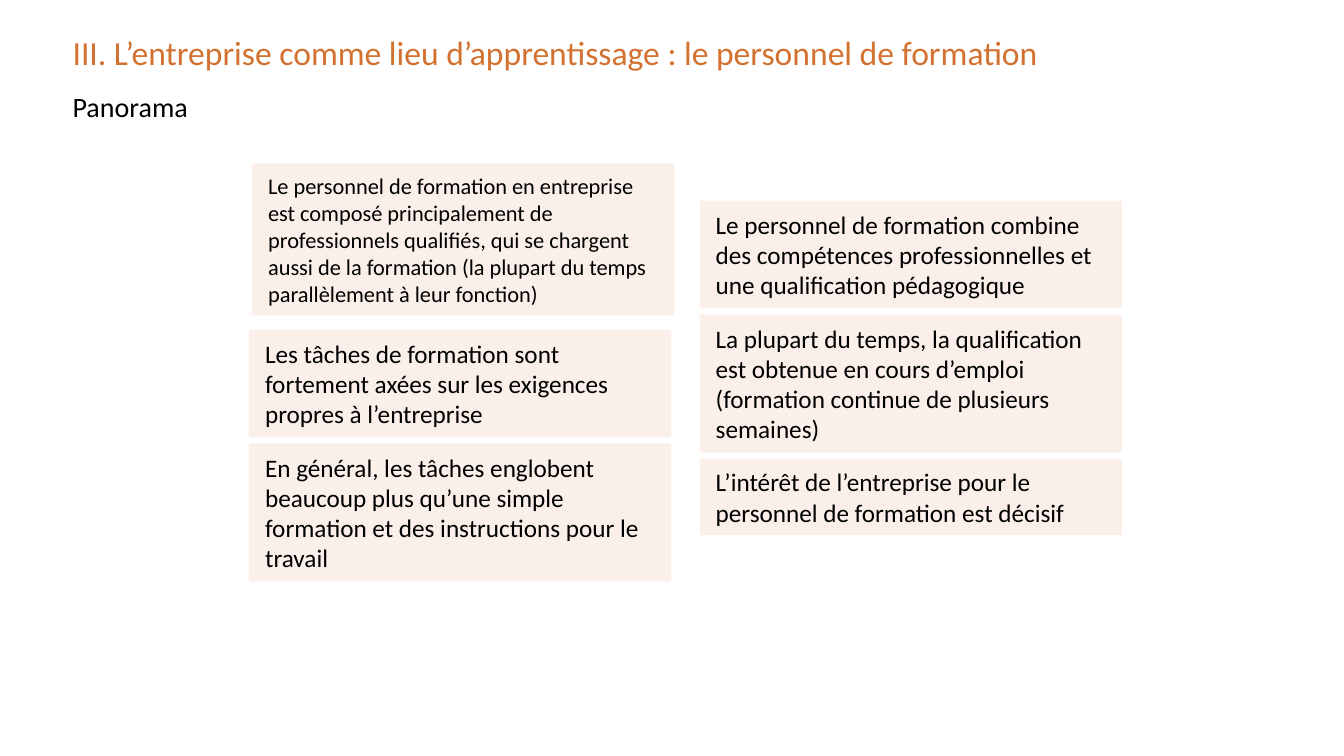
from lxml.etree import SubElement
from pptx import Presentation
from pptx.dml.color import RGBColor
from pptx.enum.shapes import MSO_SHAPE
from pptx.enum.text import MSO_ANCHOR, MSO_AUTO_SIZE, PP_ALIGN
from pptx.oxml.ns import qn
from pptx.util import Pt


def color(hex_string):
    return RGBColor.from_string(hex_string)


class SlideBuilder:
    font_name = "Calibri"
    accent = "D37230"
    black = "000000"
    tint_percent = 10

    def __init__(self, slide):
        self.slide = slide

    def set_text(self, shape, text, size, text_color, anchor, margins=(0, 0)):
        frame = shape.text_frame
        frame.word_wrap = True
        frame.vertical_anchor = anchor
        frame.margin_left = frame.margin_right = Pt(margins[0])
        frame.margin_top = frame.margin_bottom = Pt(margins[1])
        frame.text = text
        paragraph = frame.paragraphs[0]
        paragraph.alignment = PP_ALIGN.LEFT
        paragraph.space_before = Pt(0)
        font = paragraph.runs[0].font
        font.name = self.font_name
        font.size = Pt(size)
        font.color.rgb = color(text_color)
        return paragraph

    def heading(self, placeholder, text, box, size, text_color):
        placeholder.left, placeholder.top, placeholder.width, placeholder.height = map(Pt, box)
        paragraph = self.set_text(placeholder, text, size, text_color, MSO_ANCHOR.TOP)
        placeholder.text_frame.auto_size = MSO_AUTO_SIZE.NONE
        return paragraph

    def title(self, text, box):
        self.heading(self.slide.shapes.title, text, box, 24, self.accent)

    def subtitle(self, text, box):
        paragraph = self.heading(self.slide.placeholders[1], text, box, 20, self.black)
        # Plain line: no bullet, no hanging indent
        properties = paragraph._p.get_or_add_pPr()
        properties.set("marL", "0")
        properties.set("indent", "0")
        SubElement(properties, qn("a:buNone"))

    def card(self, text, left, top, width, height, size=18):
        shape = self.slide.shapes.add_shape(
            MSO_SHAPE.RECTANGLE, Pt(left), Pt(top), Pt(width), Pt(height))
        shape.shadow.inherit = False
        shape.line.fill.background()
        shape.fill.solid()
        shape.fill.fore_color.rgb = color(self.accent)
        fill_color = shape._element.spPr.find(qn("a:solidFill"))[0]
        SubElement(fill_color, qn("a:alpha"), val=str(self.tint_percent * 1000))
        self.set_text(shape, text, size, self.black, MSO_ANCHOR.MIDDLE, (11.52, 5.76))
        shape.text_frame.auto_size = MSO_AUTO_SIZE.SHAPE_TO_FIT_TEXT

    def card_stack(self, left, top, width, cards, gap=4.32):
        for text, height in cards:
            self.card(text, left, top, width, height)
            top += height + gap


def main():
    presentation = Presentation()
    presentation.slide_width = Pt(960)
    presentation.slide_height = Pt(540)
    builder = SlideBuilder(presentation.slides.add_slide(presentation.slide_layouts[1]))

    # Headings
    builder.title("III. L’entreprise comme lieu d’apprentissage : le personnel de formation",
                  (51.84, 23.04, 708.48, 35.28))
    builder.subtitle("Panorama", (51.84, 64.08, 870.48, 35.28))

    # Card heights for two, three and four lines of text
    two_lines, three_lines, four_lines = 54.72, 77.04, 98.64
    card_width = 301.68

    # Left column
    builder.card("Le personnel de formation en entreprise est composé principalement de "
                 "professionnels qualifiés, qui se chargent aussi de la formation "
                 "(la plupart du temps parallèlement à leur fonction)",
                 180, 116.64, card_width, 108.72, size=16)
    builder.card_stack(177.84, 235.44, card_width, [
        ("Les tâches de formation sont fortement axées sur les exigences "
         "propres à l’entreprise", three_lines),
        ("En général, les tâches englobent beaucoup plus qu’une simple formation "
         "et des instructions pour le travail", four_lines),
    ])

    # Right column
    builder.card_stack(499.68, 143.28, card_width, [
        ("Le personnel de formation combine des compétences professionnelles "
         "et une qualification pédagogique", three_lines),
        ("La plupart du temps, la qualification est obtenue en cours d’emploi "
         "(formation continue de plusieurs semaines)", four_lines),
        ("L’intérêt de l’entreprise pour le personnel de formation est décisif", two_lines),
    ])

    presentation.save("out.pptx")


if __name__ == "__main__":
    main()
